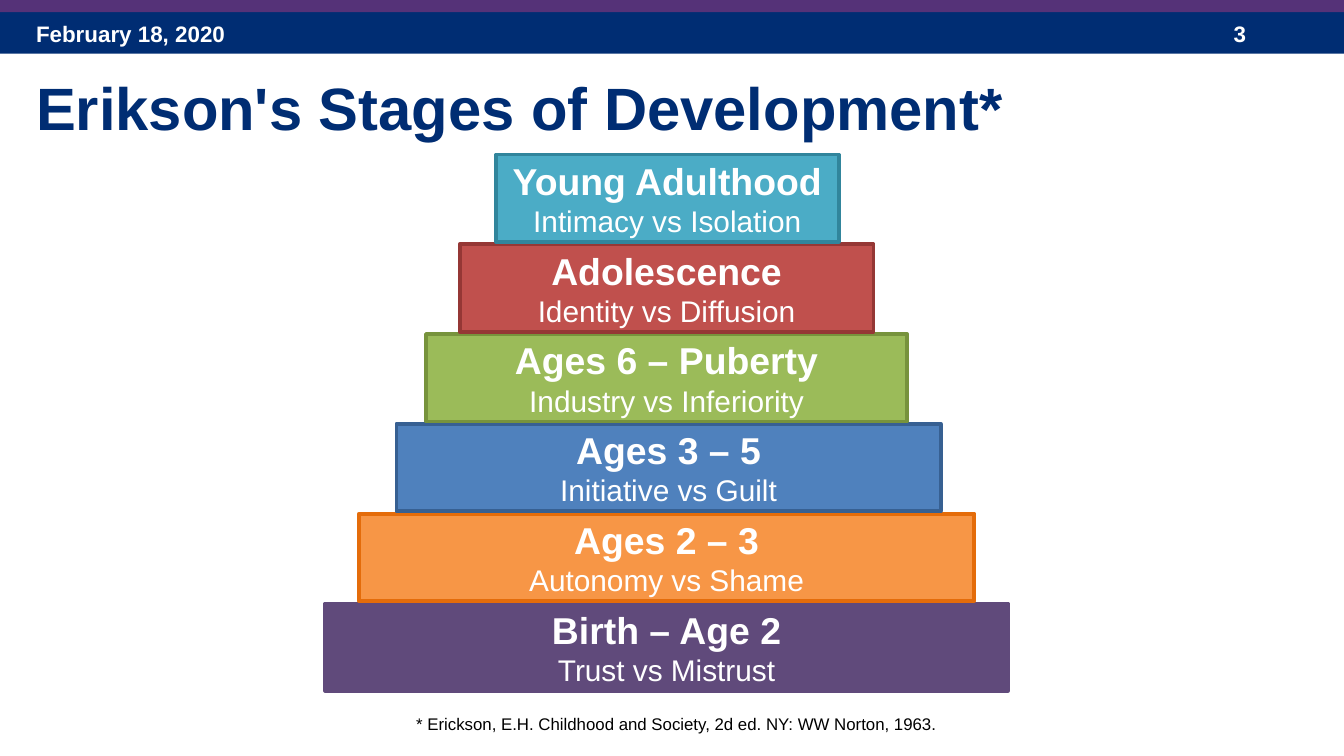
"""Build a slide that stacks Erikson's stages of development as a stepped pyramid."""
from dataclasses import dataclass

import pptx
import pptx.dml.color
import pptx.enum.shapes
import pptx.enum.text
import pptx.util
from pptx.util import Inches

ALIGN = pptx.enum.text.PP_ALIGN
ANCHOR = pptx.enum.text.MSO_ANCHOR


@dataclass(frozen=True)
class Theme:
    font: str = "Arial"
    navy: str = "002D73"
    purple: str = "553278"
    white: str = "FFFFFF"
    black: str = "000000"
    title_size: int = 32
    stage_size: int = 20
    conflict_size: int = 16
    header_size: int = 12
    note_size: int = 9
    stages: tuple = (
        ("4BACC6", "31859C"),
        ("C0504D", "953735"),
        ("9BBB59", "77933C"),
        ("4F81BD", "376092"),
        ("F79646", "E46C0A"),
        ("604A7B", "604A7B"),
    )


THEME = Theme()

STAGES = (
    ("Young Adulthood", "Intimacy vs Isolation", 3.69, 2.55),
    ("Adolescence", "Identity vs Diffusion", 3.42, 3.08),
    ("Ages 6 – Puberty", "Industry vs Inferiority", 3.17, 3.58),
    ("Ages 3 – 5", "Initiative vs Guilt", 2.95, 4.05),
    ("Ages 2 – 3", "Autonomy vs Shame", 2.67, 4.58),
    ("Birth – Age 2", "Trust vs Mistrust", 2.42, 5.08),
)
TOP, BOTTOM_TOP = 1.15, 4.49
STAGE_HEIGHT = 0.65


def rgb(code):
    return pptx.dml.color.RGBColor.from_string(code)


def write(para, text, *, size, color=THEME.white, bold=False, align=ALIGN.LEFT):
    para.alignment = align
    span = para.add_run()
    span.text = text
    span.font.name = THEME.font
    span.font.size = pptx.util.Pt(size)
    span.font.bold = bold
    span.font.color.rgb = rgb(color)


def add_label(slide, text, left, top, width, height, *, wrap=True, **style):
    box = slide.shapes.add_textbox(Inches(left), Inches(top), Inches(width), Inches(height))
    box.text_frame.word_wrap = wrap
    box.text_frame.vertical_anchor = ANCHOR.TOP
    write(box.text_frame.paragraphs[0], text, **style)
    return box


def add_bar(shapes, left, top, width, height, fill, line=None):
    bar = shapes.add_shape(
        pptx.enum.shapes.MSO_SHAPE.RECTANGLE,
        Inches(left), Inches(top), Inches(width), Inches(height),
    )
    bar.shadow.inherit = False
    bar.fill.solid()
    bar.fill.fore_color.rgb = rgb(fill)
    if line:
        bar.line.color.rgb = rgb(line)
        bar.line.width = pptx.util.Pt(2)
    else:
        bar.line.fill.background()
    return bar


def add_stage(group, left, top, width, name, conflict, fill, line):
    bar = add_bar(group.shapes, left, top, width, STAGE_HEIGHT, fill, line)
    frame = bar.text_frame
    frame.word_wrap = True
    frame.vertical_anchor = ANCHOR.MIDDLE
    write(frame.paragraphs[0], name, size=THEME.stage_size, bold=True, align=ALIGN.CENTER)
    write(frame.add_paragraph(), conflict, size=THEME.conflict_size, align=ALIGN.CENTER)


def add_pyramid(slide):
    group = slide.shapes.add_group_shape()
    step = (BOTTOM_TOP - TOP) / (len(STAGES) - 1)
    layers = list(enumerate(zip(STAGES, THEME.stages)))
    for index, ((name, conflict, left, width), (fill, line)) in reversed(layers):
        add_stage(group, left, TOP + index * step, width, name, conflict, fill, line)


def add_header(slide):
    add_bar(slide.shapes, 0, 0.07, 10, 0.33, THEME.navy)
    add_label(slide, "February 18, 2020", 0.17, 0.1, 2.33, 0.3, size=THEME.header_size, bold=True)
    add_label(slide, "3", 9.08, 0.1, 0.75, 0.3, size=THEME.header_size, bold=True)
    add_bar(slide.shapes, 0, 0, 10, 0.09, THEME.purple)


def main():
    deck = pptx.Presentation()
    deck.slide_width = Inches(10)
    deck.slide_height = Inches(10) * 9 // 16
    slide = deck.slides.add_slide(deck.slide_layouts[6])
    add_header(slide)
    add_label(
        slide, "Erikson's Stages of Development*", 0.17, 0.48, 9.5, 0.7,
        size=THEME.title_size, color=THEME.navy, bold=True,
    )
    note = add_label(
        slide, "* Erickson, E.H. Childhood and Society, 2d ed. NY: WW Norton, 1963.",
        2.97, 5.26, 4.12, 0.25,
        wrap=False, size=THEME.note_size, color=THEME.black, align=ALIGN.CENTER,
    )
    note.text_frame.auto_size = pptx.enum.text.MSO_AUTO_SIZE.SHAPE_TO_FIT_TEXT
    add_pyramid(slide)
    deck.save("out.pptx")


if __name__ == "__main__":
    main()
